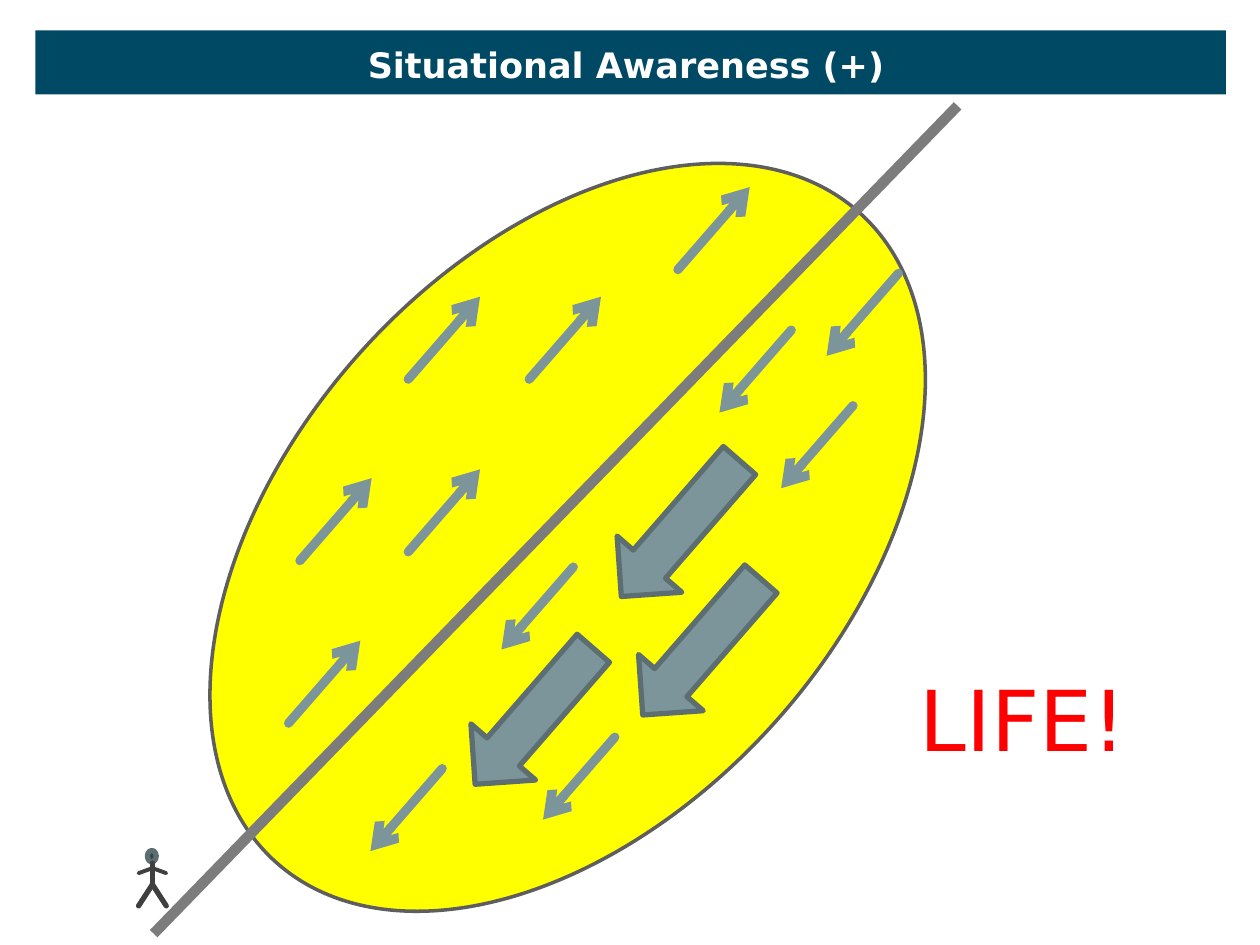
from lxml.etree import SubElement
from pptx import Presentation
from pptx.dml.color import RGBColor
from pptx.enum.shapes import MSO_CONNECTOR, MSO_SHAPE
from pptx.enum.text import MSO_ANCHOR, PP_ALIGN
from pptx.oxml.ns import qn
from pptx.util import Inches, Pt

FONT = "DejaVu Sans"
WHITE = RGBColor(0xFF, 0xFF, 0xFF)
RED = RGBColor(0xFF, 0x00, 0x00)
YELLOW = RGBColor(0xFF, 0xFF, 0x00)
NAVY = RGBColor(0x00, 0x49, 0x64)
OUTLINE = RGBColor(0x5E, 0x5E, 0x5E)
DIVIDER = RGBColor(0x7C, 0x7C, 0x7C)
STEEL = RGBColor(0x7C, 0x95, 0x9A)
DARK_STEEL = RGBColor(0x5C, 0x6E, 0x72)
CHARCOAL = RGBColor(0x3F, 0x3F, 0x3F)

ARROW_RUN, ARROW_RISE = 0.57, 0.655
UPWARD_STARTS = [(2.29, 5.74), (3.24, 3.01), (4.2, 3.01),
                 (2.38, 4.45), (3.24, 4.38), (5.38, 2.14)]
DOWNWARD_STARTS = [(4.55, 4.5), (3.51, 6.1), (7.13, 2.17),
                   (4.88, 5.85), (6.77, 3.22), (6.28, 2.62)]
BLOCK_ARROWS = [(5.06, 3.48), (3.9, 4.97), (5.23, 4.42)]


def add_shape(slide, kind, box, fill, line=None, width=0, rotation=0):
    shape = slide.shapes.add_shape(kind, *map(Inches, box))
    shape.shadow.inherit = False
    shape.rotation = rotation
    shape.fill.solid()
    shape.fill.fore_color.rgb = fill
    if line is None:
        shape.line.fill.background()
    else:
        shape.line.color.rgb = line
        shape.line.width = Pt(width)
    return shape


def add_line(slide, start, end, color, width, rounded=True, arrow=False):
    connector = slide.shapes.add_connector(
        MSO_CONNECTOR.STRAIGHT, *map(Inches, (*start, *end)))
    connector.line.color.rgb = color
    connector.line.width = Pt(width)
    outline = connector.line._get_or_add_ln()
    if rounded:
        outline.set("cap", "rnd")
    if arrow:
        SubElement(outline, qn("a:tailEnd"), type="arrow")
    SubElement(connector._element.spPr, qn("a:effectLst"))


def write_text(shape, text, size, color, bold=False):
    shape.text_frame.text = text
    font = shape.text_frame.paragraphs[0].runs[0].font
    font.name = FONT
    font.size = Pt(size)
    font.bold = bold
    font.color.rgb = color


def add_title(slide):
    title = slide.shapes.title
    title.left, title.top, title.width, title.height = map(
        Inches, (2.78, 0.29, 4.38, 0.44))
    write_text(title, "Situational Awareness (+)", 20, WHITE, bold=True)
    title.text_frame.word_wrap = False
    title.text_frame.vertical_anchor = MSO_ANCHOR.MIDDLE
    title.text_frame.paragraphs[0].alignment = PP_ALIGN.CENTER
    bar = add_shape(slide, MSO_SHAPE.RECTANGLE, (0.28, 0.24, 9.45, 0.51), NAVY)
    title._element.addprevious(bar._element)


def add_flow_arrows(slide, starts, direction):
    """Draw parallel arrows: direction 1 points up right, -1 down left."""
    for x, y in starts:
        tip = (x + direction * ARROW_RUN, y - direction * ARROW_RISE)
        add_line(slide, (x, y), tip, STEEL, 5.25, arrow=True)


def add_person(slide):
    center, shoulder, hip = 1.21, 6.89, 7.02
    add_shape(slide, MSO_SHAPE.FLOWCHART_CONNECTOR, (1.17, 6.75, 0.07, 0.09),
              CHARCOAL, DARK_STEEL, 3)
    add_line(slide, (center, 6.85), (center, hip), CHARCOAL, 3)
    for reach in (-0.11, 0.11):
        add_line(slide, (center, shoulder), (center + reach, 6.93), CHARCOAL, 2.25)
        add_line(slide, (center, hip), (center + reach, 7.19), CHARCOAL, 3)


def add_life_label(slide):
    label = slide.shapes.add_textbox(*map(Inches, (7.2, 5.25, 1.97, 0.91)))
    label.text_frame.word_wrap = True
    write_text(label, "LIFE!", 48, RED)


def main():
    prs = Presentation()
    prs.slide_width, prs.slide_height = Inches(10), Inches(7.5)
    slide = prs.slides.add_slide(prs.slide_layouts[5])
    add_title(slide)
    add_shape(slide, MSO_SHAPE.OVAL, (2.3, 0.8, 4.41, 6.93), YELLOW, OUTLINE, 2, 42)
    add_line(slide, (1.22, 7.41), (7.6, 0.84), DIVIDER, 6, rounded=False)
    add_flow_arrows(slide, UPWARD_STARTS, 1)
    add_flow_arrows(slide, DOWNWARD_STARTS, -1)
    for left, top in BLOCK_ARROWS:
        add_shape(slide, MSO_SHAPE.DOWN_ARROW, (left, top, 0.68, 1.43),
                  STEEL, DARK_STEEL, 3, 41)
    add_person(slide)
    add_life_label(slide)
    prs.save("out.pptx")


if __name__ == "__main__":
    main()
